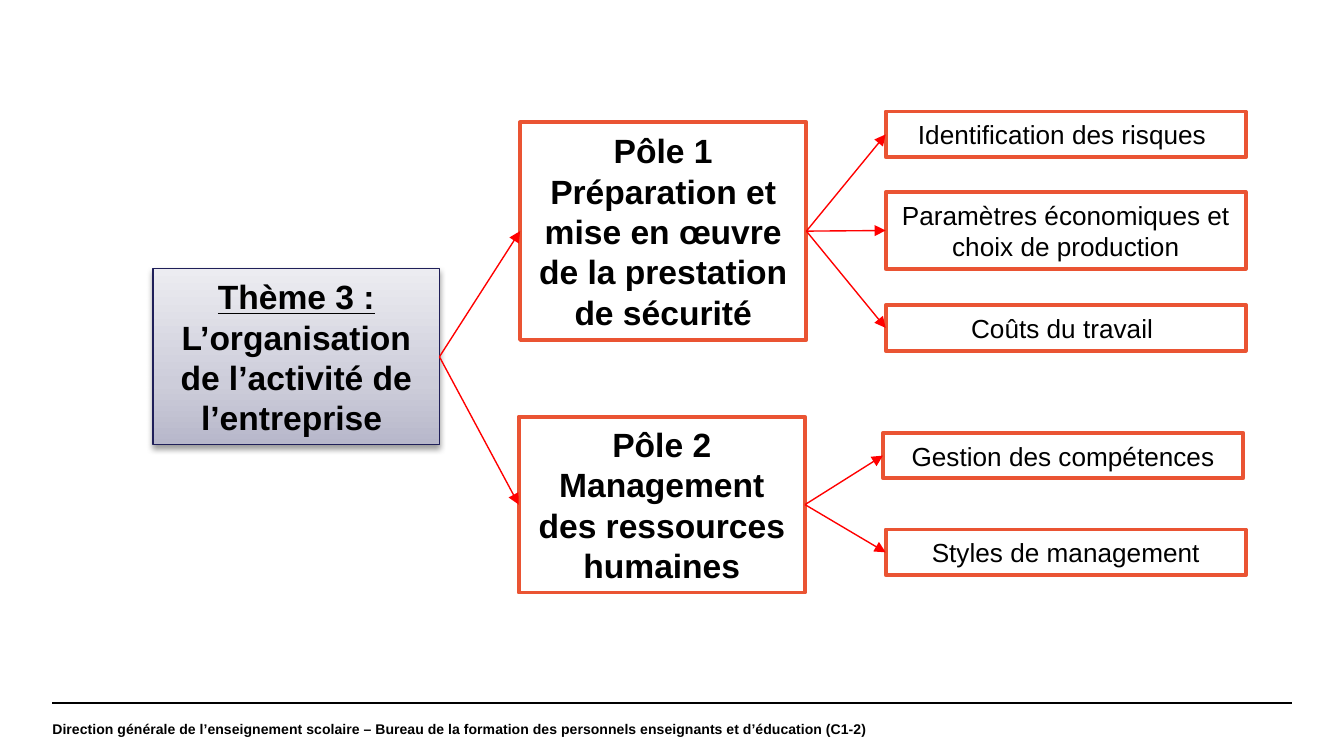
import copy

import pptx
import pptx.dml.color
import pptx.enum.shapes
import pptx.enum.text
import pptx.oxml
import pptx.oxml.ns
import pptx.util

Inches, Pt = pptx.util.Inches, pptx.util.Pt
RGBColor = pptx.dml.color.RGBColor

BLACK = RGBColor(0x00, 0x00, 0x00)
WHITE = RGBColor(0xFF, 0xFF, 0xFF)
ORANGE = RGBColor(0xEA, 0x54, 0x33)
RED = RGBColor(0xFF, 0x00, 0x00)
NAVY = RGBColor(0x1F, 0x1F, 0x59)
THEME_STOPS = [(0, RGBColor(0xB7, 0xB7, 0xCA)),
               (0.35, RGBColor(0xCD, 0xCD, 0xDA)),
               (1, RGBColor(0xEC, 0xEC, 0xF1))]
FONT = "Arial"
SLIDE_WIDTH = 10

# Content: each pole has a box, its lines of text and its topics
FOOTER = ("Direction générale de l’enseignement scolaire – Bureau de la formation "
          "des personnels enseignants et d’éducation (C1-2)")
THEME_BOX = (1.14, 2, 2.13, 1.31)
THEME_TEXT = ("Thème 3 : ", "L’organisation de l’activité de l’entreprise ")
POLES = [
    {"box": (3.87, 0.91, 2.13, 1.62),
     "lines": ["Pôle 1", "Préparation et mise en œuvre de la prestation de sécurité"],
     "topics": [("Identification des risques ", 6.59, 0.83, 0.34),
                ("Paramètres économiques et choix de production", 6.59, 1.43, 0.57),
                ("Coûts du travail ", 6.59, 2.27, 0.34)]},
    {"box": (3.86, 3.1, 2.13, 1.31),
     "lines": ["Pôle 2", "Management des ressources humaines"],
     "topics": [("Gestion des compétences", 6.57, 3.22, 0.34),
                ("Styles de management", 6.59, 3.94, 0.34)]},
]
TOPIC_WIDTH = 2.68
LEFT_SITE, RIGHT_SITE = 1, 3


def drawing_element(xml):
    tag, _, rest = xml.partition(" ")
    return pptx.oxml.parse_xml(f"<a:{tag} {pptx.oxml.ns.nsdecls('a')} {rest}")


def format_paragraph(paragraph, size, bold):
    paragraph.alignment = pptx.enum.text.PP_ALIGN.CENTER
    paragraph.font.name = FONT
    paragraph.font.size = Pt(size)
    paragraph.font.bold = bold
    paragraph.font.color.rgb = BLACK


def add_box(slide, box, lines, size, bold, line_color=ORANGE, line_width=2):
    shape = slide.shapes.add_shape(pptx.enum.shapes.MSO_SHAPE.RECTANGLE, *map(Inches, box))
    shape.fill.solid()
    shape.fill.fore_color.rgb = WHITE
    shape.line.color.rgb = line_color
    shape.line.width = Pt(line_width)
    shape.shadow.inherit = False
    frame = shape.text_frame
    frame.word_wrap = True
    frame.auto_size = pptx.enum.text.MSO_AUTO_SIZE.SHAPE_TO_FIT_TEXT
    for index, text in enumerate(lines):
        paragraph = frame.paragraphs[0] if index == 0 else frame.add_paragraph()
        paragraph.add_run().text = text
        format_paragraph(paragraph, size, bold)
    return shape


def add_line(slide, color, width, ends=(0, 0, 0, 0)):
    connector = slide.shapes.add_connector(
        pptx.enum.shapes.MSO_CONNECTOR.STRAIGHT, *map(Inches, ends))
    connector.line.color.rgb = color
    connector.line.width = Pt(width)
    connector._element.spPr.append(drawing_element("effectLst />"))
    return connector


def add_arrow(slide, source, target):
    connector = add_line(slide, RED, 0.75)
    connector.begin_connect(source, RIGHT_SITE)
    connector.end_connect(target, LEFT_SITE)
    line = connector._element.spPr.find(pptx.oxml.ns.qn("a:ln"))
    line.append(drawing_element('tailEnd type="triangle"/>'))


def add_theme(slide):
    shape = add_box(slide, THEME_BOX, THEME_TEXT[:1], 18, True, NAVY, 0.75)
    paragraph = shape.text_frame.paragraphs[0]
    paragraph.runs[0].font.underline = True
    paragraph.add_run().text = THEME_TEXT[1]

    # Three-stop gradient, running from bottom to top
    shape.fill.gradient()
    shape.fill.gradient_angle = 90
    stop_list = shape._element.spPr.find(".//" + pptx.oxml.ns.qn("a:gsLst"))
    stop_list.append(copy.deepcopy(stop_list[0]))
    for stop, (position, color) in zip(shape.fill.gradient_stops, THEME_STOPS):
        stop.position = position
        stop.color.rgb = color

    # Soft shadow below
    effects = shape._element.spPr.find(pptx.oxml.ns.qn("a:effectLst"))
    effects.append(drawing_element(
        f'outerShdw blurRad="{Pt(3.1)}" dist="{Pt(1.6)}" dir="5400000" rotWithShape="0">'
        '<a:srgbClr val="000000"><a:alpha val="38000"/></a:srgbClr></a:outerShdw>'))
    return shape


def add_footer(slide):
    add_line(slide, BLACK, 0.8, (0.39, 5.23, 9.61, 5.23))
    box = slide.shapes.add_textbox(*map(Inches, (0.39, 5.23, 9.33, 0.39)))
    frame = box.text_frame
    frame.word_wrap = True
    frame.vertical_anchor = pptx.enum.text.MSO_ANCHOR.MIDDLE
    frame.margin_left = frame.margin_right = frame.margin_top = frame.margin_bottom = 0
    paragraph = frame.paragraphs[0]
    paragraph.add_run().text = FOOTER
    format_paragraph(paragraph, 7.5, True)
    paragraph.alignment = pptx.enum.text.PP_ALIGN.LEFT


def main():
    # A 16:9 slide
    presentation = pptx.Presentation()
    presentation.slide_width = Inches(SLIDE_WIDTH)
    presentation.slide_height = Inches(SLIDE_WIDTH * 9 / 16)
    slide = presentation.slides.add_slide(presentation.slide_layouts[6])

    add_footer(slide)

    # Tree: theme, poles, topics
    theme = add_theme(slide)
    for pole in POLES:
        pole_shape = add_box(slide, pole["box"], pole["lines"], 18, True)
        add_arrow(slide, theme, pole_shape)
        for text, left, top, height in pole["topics"]:
            topic = add_box(slide, (left, top, TOPIC_WIDTH, height), [text], 14, False)
            add_arrow(slide, pole_shape, topic)

    presentation.save("out.pptx")


if __name__ == "__main__":
    main()
